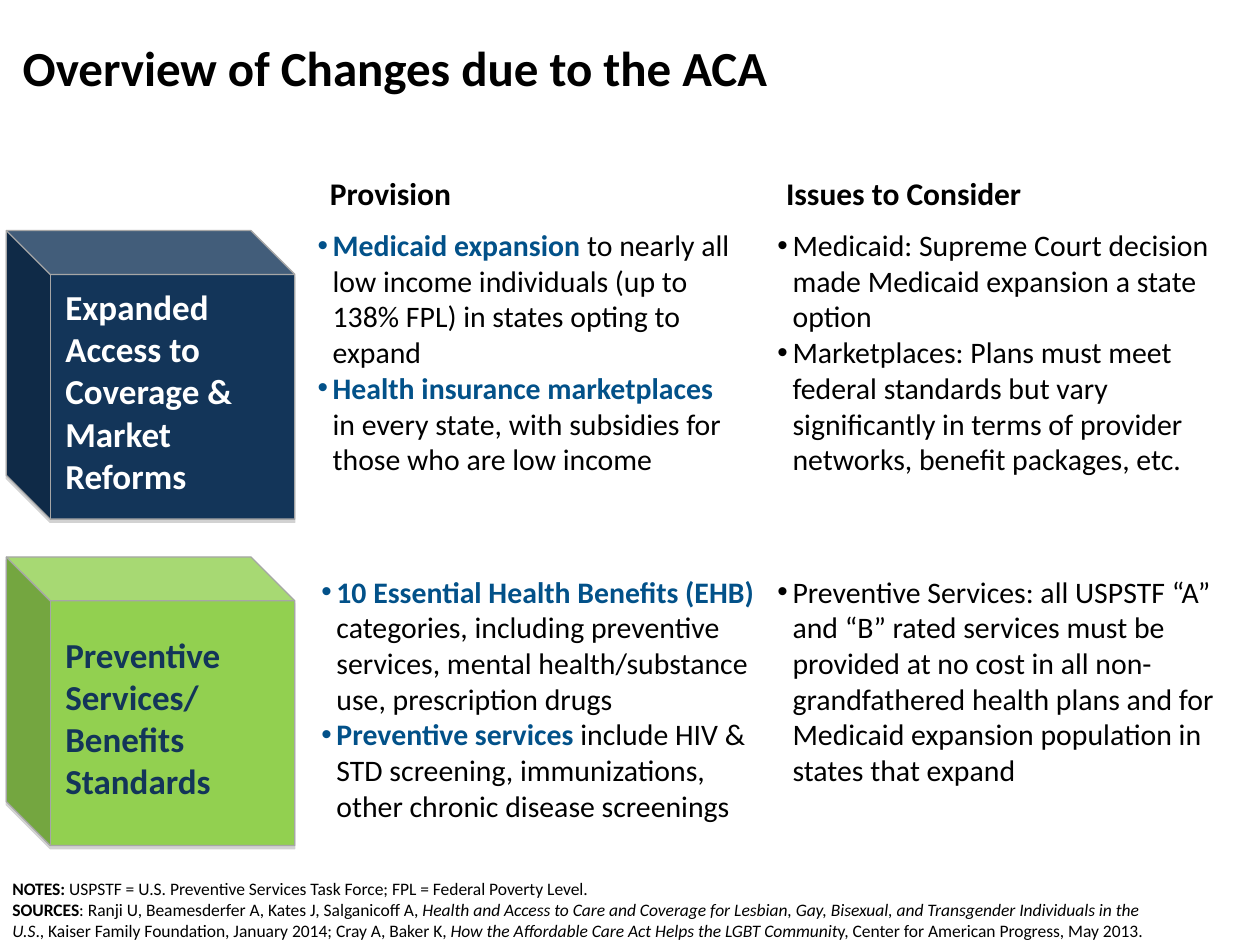
from lxml import etree
from pptx import Presentation
from pptx.dml.color import RGBColor
from pptx.enum.shapes import MSO_SHAPE
from pptx.enum.text import MSO_ANCHOR, MSO_AUTO_SIZE, PP_ALIGN
from pptx.oxml.ns import qn
from pptx.util import Inches, Pt

CUBE = MSO_SHAPE.CUBE
TOP = MSO_ANCHOR.TOP
NO_FIT = MSO_AUTO_SIZE.NONE
LEFT = PP_ALIGN.LEFT

COMPARISON_LAYOUT = 4
FONT = "Calibri"
BLACK, WHITE, NAVY, BLUE, GREEN = "000000", "FFFFFF", "133559", "025189", "92D050"
LIST_TOPS = (1.75, 4.5)

# Each list: placeholder index, left, row, width, paragraphs of (highlight, text).
LISTS = [
    (1, 2.42, 0, 3.52, [
        ("Medicaid expansion ",
         "to nearly all low income individuals (up to 138% FPL) in states opting to expand"),
        ("Health insurance marketplaces ",
         "in every state, with subsidies for those who are low income")]),
    (2, 6.07, 0, 3.92, [
        ("", "Medicaid: Supreme Court decision made Medicaid expansion a state option"),
        ("", "Marketplaces: Plans must meet federal standards but vary significantly "
             "in terms of provider networks, benefit packages, etc.")]),
    (3, 2.45, 1, 3.78, [
        ("10 Essential Health Benefits (EHB) ",
         "categories, including preventive services, mental health/substance use, "
         "prescription drugs"),
        ("Preventive services ",
         "include HIV & STD screening, immunizations, other chronic disease screenings")]),
    (4, 6.07, 1, 3.78, [
        ("", "Preventive Services: all USPSTF “A” and “B” rated services must be provided "
             "at no cost in all non-grandfathered health plans and for Medicaid expansion "
             "population in states that expand")]),
]
HEADINGS = [(2.52, "Provision"), (6.14, "Issues to Consider")]
CUBES = [
    (1.83, NAVY, 2.22, 1.78, WHITE, ["Expanded Access to Coverage & Market Reforms"]),
    (4.42, GREEN, 4.98, 1.45, NAVY, ["Preventive Services/", "Benefits Standards"]),
]
# Each footnote run: text, bold, italic.
FOOTNOTES = [
    [("NOTES: ", True, False),
     ("USPSTF = U.S. Preventive Services Task Force; FPL = Federal Poverty Level.",
      False, False)],
    [("SOURCES", True, False),
     (": Ranji U, Beamesderfer A, Kates J, Salganicoff A, ", False, False),
     ("Health and Access to Care and Coverage for Lesbian, Gay, Bisexual, and "
      "Transgender Individuals in the U.S", False, True),
     ("., Kaiser Family Foundation, January 2014; Cray A, Baker K, ", False, False),
     ("How the Affordable Care Act Helps the LGBT Communit", False, True),
     ("y, Center for American Progress, May 2013.", False, False)],
]


def rgb(color):
    """Turn a hex string into a colour."""
    return RGBColor.from_string(color)


def add_run(p, text, size, color=BLACK, bold=False, italic=False):
    """Append one formatted run to a paragraph."""
    r = p.add_run()
    r.text = text
    r.font.name = FONT
    r.font.size = Pt(size)
    r.font.bold = bold
    r.font.italic = italic
    r.font.color.rgb = rgb(color)


def prepare_frame(sp):
    """Set wrapping, top anchor and fixed size, and return the text frame."""
    tf = sp.text_frame
    tf.word_wrap = True
    tf.auto_size = NO_FIT
    tf.vertical_anchor = TOP
    return tf


def paragraphs(tf, items):
    """Yield a left-aligned paragraph together with each item."""
    for i, item in enumerate(items):
        p = tf.add_paragraph() if i else tf.paragraphs[0]
        p.alignment = LEFT
        yield p, item


def place(sp, left, top, width, height):
    """Move and size a shape, in inches."""
    sp.left, sp.top = Inches(left), Inches(top)
    sp.width, sp.height = Inches(width), Inches(height)


def add_bullet(p):
    """Give a paragraph a round bullet with a hanging indent."""
    pPr = p._p.get_or_add_pPr()
    pPr.set("marL", str(Inches(0.12)))
    pPr.set("indent", str(-Inches(0.12)))
    etree.SubElement(pPr, qn("a:buFont"), typeface="Arial")
    etree.SubElement(pPr, qn("a:buChar"), char="•")


def fill_title(slide, text):
    """Place and write the slide title."""
    sp = slide.shapes.title
    place(sp, 0.08, 0.25, 10, 1.17)
    for p, line in paragraphs(prepare_frame(sp), [text]):
        add_run(p, line, 28, bold=True)


def fill_list(sp, left, top, width, items):
    """Place a body placeholder and write its bulleted list."""
    place(sp, left, top, width, 2.1)
    for p, (highlight, text) in paragraphs(prepare_frame(sp), items):
        add_bullet(p)
        p.space_before = Pt(0)
        if highlight:
            add_run(p, highlight, 17, BLUE, bold=True)
        add_run(p, text, 17)


def add_text(slide, left, top, width, height, lines):
    """Add a text box from lines of run arguments."""
    sp = slide.shapes.add_textbox(
        Inches(left), Inches(top), Inches(width), Inches(height))
    for p, runs in paragraphs(prepare_frame(sp), lines):
        for args in runs:
            add_run(p, *args)


def add_cube(slide, top, color):
    """Add a mirrored cube with a thin outline and a soft shadow."""
    sp = slide.shapes.add_shape(
        CUBE, Inches(0.05), Inches(top), Inches(2.29), Inches(2.29))
    sp.adjustments[0] = 0.152
    sp.fill.solid()
    sp.fill.fore_color.rgb = rgb(color)
    sp.line.color.rgb = rgb("A6A6A6")
    sp.line.width = Pt(0.75)
    sp.shadow.inherit = False
    spPr = sp._element.spPr
    spPr.find(qn("a:xfrm")).set("flipH", "1")
    shadow = etree.SubElement(
        spPr.find(qn("a:effectLst")), qn("a:outerShdw"),
        blurRad="0", dist=str(Pt(1.8)), dir="5400000", rotWithShape="0")
    tint = etree.SubElement(shadow, qn("a:srgbClr"), val="808080")
    etree.SubElement(tint, qn("a:alpha"), val="35000")


def main():
    """Build the slide and save it."""
    prs = Presentation()
    prs.slide_width, prs.slide_height = Inches(10), Inches(7.5)
    slide = prs.slides.add_slide(prs.slide_layouts[COMPARISON_LAYOUT])
    fill_title(slide, "Overview of Changes due to the ACA")
    bodies = {sp.placeholder_format.idx: sp for sp in slide.placeholders}
    for idx, left, row, width, items in LISTS:
        fill_list(bodies[idx], left, LIST_TOPS[row], width, items)
    for left, text in HEADINGS:
        add_text(slide, left, 1.33, 3.45, 0.4, [[(text, 18, BLACK, True)]])
    for top, color, label_top, height, ink, lines in CUBES:
        add_cube(slide, top, color)
        add_text(slide, 0.42, label_top, 1.67, height,
                 [[(line, 20, ink, True)] for line in lines])
    add_text(slide, 0, 6.92, 9.33, 0.42,
             [[(text, 10, BLACK, bold, italic) for text, bold, italic in runs]
              for runs in FOOTNOTES])
    prs.save("out.pptx")


if __name__ == "__main__":
    main()
